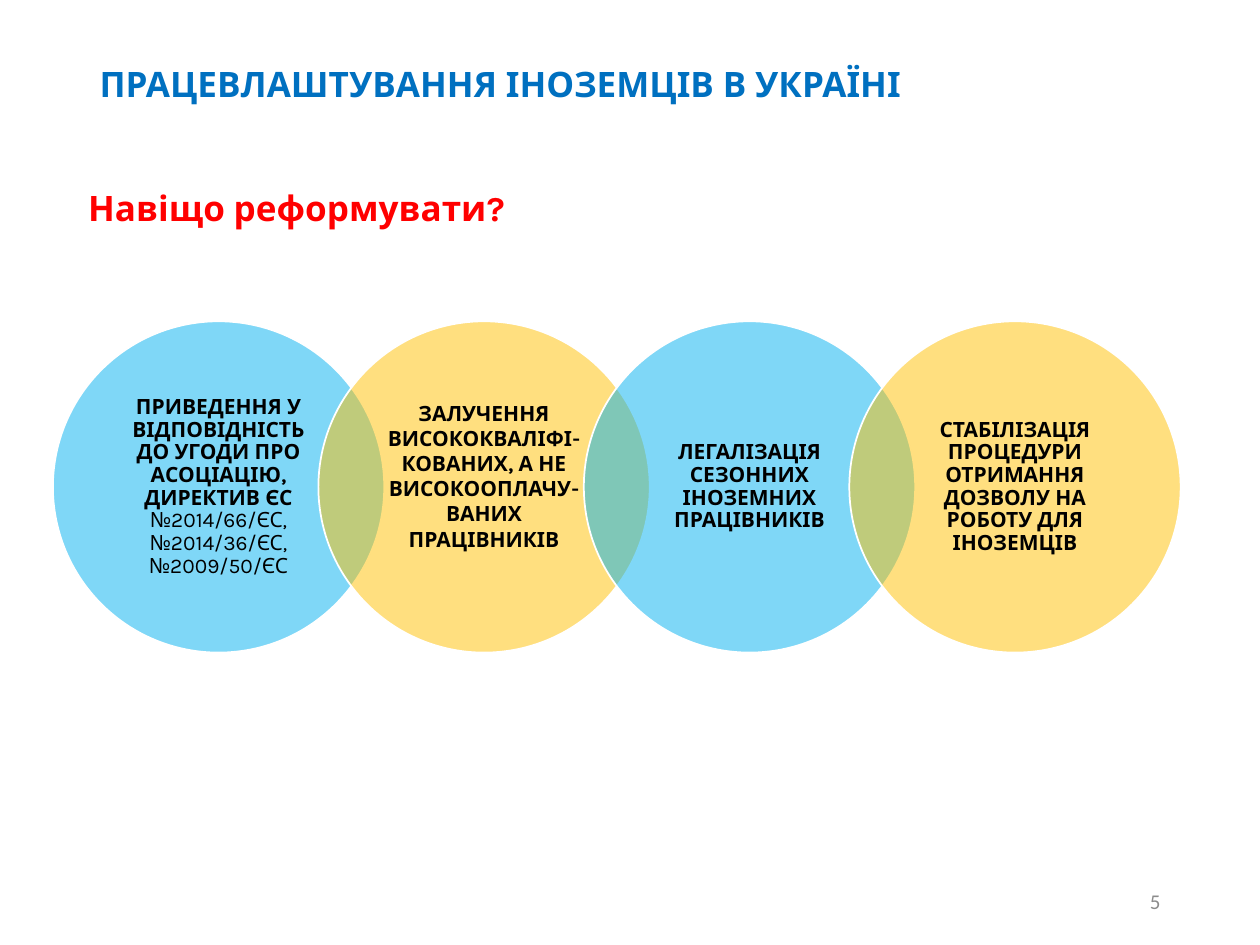
from dataclasses import dataclass

from lxml import etree
from pptx import Presentation
from pptx.dml.color import RGBColor
from pptx.enum.shapes import MSO_SHAPE
from pptx.enum.text import MSO_ANCHOR, MSO_AUTO_SIZE, PP_ALIGN
from pptx.oxml.ns import qn
from pptx.util import Inches, Pt

LEFT, CENTER, RIGHT = PP_ALIGN.LEFT, PP_ALIGN.CENTER, PP_ALIGN.RIGHT
TOP, MIDDLE = MSO_ANCHOR.TOP, MSO_ANCHOR.MIDDLE
NO_AUTOFIT = MSO_AUTO_SIZE.NONE
OVAL = MSO_SHAPE.OVAL

COLORS = {
    "title": "0070C0",
    "question": "FF0000",
    "blue": "00B0F0",
    "yellow": "FFC000",
    "outline": "FFFFFF",
    "text": "000000",
    "number": "8C8C8C",
}
TITLE_ONLY = 5
DIAMETER = 2.63
CIRCLE_LEFT, CIRCLE_TOP, CIRCLE_STEP = 0.42, 2.55, 2.107
LABEL_SIDE = 1.86
LABEL_OFFSET = (DIAMETER - LABEL_SIDE) / 2


@dataclass
class Reason:
    label: str
    color: str
    directives: str = ""
    line_spacing: float = 0.9
    bottom_inset: float = 0.02


REASONS = [
    Reason("ПРИВЕДЕННЯ У ВІДПОВІДНІСТЬ ДО УГОДИ ПРО АСОЦІАЦІЮ, ДИРЕКТИВ ЄС ", "blue",
           directives="№2014/66/ЄС, №2014/36/ЄС, №2009/50/ЄС"),
    Reason("ЗАЛУЧЕННЯ ВИСОКОКВАЛІФІ-КОВАНИХ, А НЕ ВИСОКООПЛАЧУ-ВАНИХ ПРАЦІВНИКІВ", "yellow",
           line_spacing=1.0, bottom_inset=0.2),
    Reason("ЛЕГАЛІЗАЦІЯ СЕЗОННИХ ІНОЗЕМНИХ ПРАЦІВНИКІВ", "blue"),
    Reason("СТАБІЛІЗАЦІЯ ПРОЦЕДУРИ ОТРИМАННЯ ДОЗВОЛУ НА РОБОТУ ДЛЯ ІНОЗЕМЦІВ", "yellow"),
]


def write(shape, text: str, *, size: float, color: str, bold: bool = True,
          font: str = "Karla", align=LEFT, anchor=MIDDLE, line_spacing: float = 0.9,
          insets: tuple = (0.1, 0.05, 0.1, 0.05), plain_tail: str = "") -> None:
    """Fill a shape with one paragraph; plain_tail follows in regular weight."""
    frame = shape.text_frame
    frame.word_wrap = True
    frame.auto_size = NO_AUTOFIT
    frame.vertical_anchor = anchor
    (frame.margin_left, frame.margin_top,
     frame.margin_right, frame.margin_bottom) = map(Inches, insets)
    paragraph = frame.paragraphs[0]
    paragraph.alignment = align
    paragraph.line_spacing = line_spacing
    for words, weight in ((text, bold), (plain_tail, False)):
        if words:
            run = paragraph.add_run()
            run.text = words
            run.font.name = font
            run.font.size = Pt(size)
            run.font.bold = weight
            run.font.color.rgb = RGBColor.from_string(COLORS[color])


def add_text(slide, left: float, top: float, width: float, height: float,
             text: str, **text_format) -> None:
    box = slide.shapes.add_textbox(Inches(left), Inches(top), Inches(width), Inches(height))
    write(box, text, **text_format)


def add_circle(slide, left: float, color: str) -> None:
    """Draw a half-transparent circle, so that neighbours blend where they overlap."""
    circle = slide.shapes.add_shape(OVAL, Inches(left), Inches(CIRCLE_TOP),
                                    Inches(DIAMETER), Inches(DIAMETER))
    circle.shadow.inherit = False
    circle.fill.solid()
    circle.fill.fore_color.rgb = RGBColor.from_string(COLORS[color])
    fill_color = circle.fill._xPr.find(qn("a:solidFill"))[0]
    etree.SubElement(fill_color, qn("a:alpha"), val="50000")
    circle.line.color.rgb = RGBColor.from_string(COLORS["outline"])
    circle.line.width = Pt(1)


def add_reason(slide, left: float, reason: Reason) -> None:
    add_circle(slide, left, reason.color)
    add_text(slide, left + LABEL_OFFSET, CIRCLE_TOP + LABEL_OFFSET, LABEL_SIDE, LABEL_SIDE,
             reason.label, size=12, color="text", align=CENTER,
             line_spacing=reason.line_spacing, plain_tail=reason.directives,
             insets=(0.14, 0.02, 0.14, reason.bottom_inset))


def main() -> None:
    deck = Presentation()
    deck.slide_width, deck.slide_height = Inches(10), Inches(7.5)
    slide = deck.slides.add_slide(deck.slide_layouts[TITLE_ONLY])

    title = slide.shapes.title
    title.left, title.top = Inches(0.69), Inches(0.4)
    title.width, title.height = Inches(8.54), Inches(0.56)
    write(title, "ПРАЦЕВЛАШТУВАННЯ ІНОЗЕМЦІВ В УКРАЇНІ", size=20, color="title")

    add_text(slide, 7.06, 6.95, 2.25, 0.4, "5", size=12, color="number", bold=False,
             font="Calibri", align=RIGHT, line_spacing=1.0)
    add_text(slide, 0.6, 1.02, 8.62, 5.41, "Навіщо реформувати?", size=20,
             color="question", anchor=TOP, insets=(0.1, 0.5, 0.1, 0.05))

    for index, reason in enumerate(REASONS):
        add_reason(slide, CIRCLE_LEFT + index * CIRCLE_STEP, reason)

    deck.save("out.pptx")


if __name__ == "__main__":
    main()
